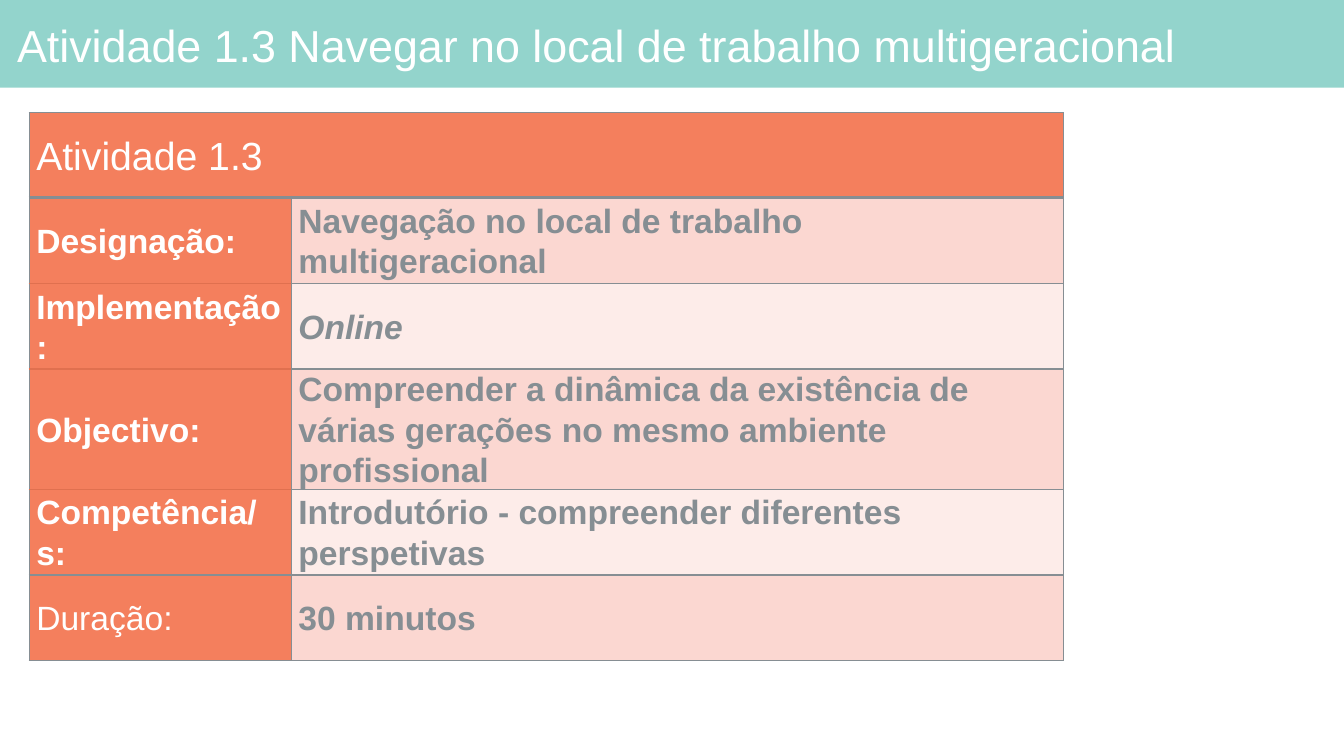
from dataclasses import dataclass

from lxml import etree
from pptx import Presentation
from pptx import util as u
from pptx.dml.color import RGBColor
from pptx.enum import shapes, text
from pptx.oxml import ns

PX = 9144  # EMU per px, 100 px to the inch


@dataclass(frozen=True)
class Theme:
    font: str = "Arial"
    teal: str = "93D4CC"
    coral: str = "F47F5D"
    seam: str = "E0704F"
    pink: str = "FBD7D1"
    pale: str = "FDECE9"
    gray: str = "868E93"
    white: str = "FFFFFF"
    title: int = 32
    head: int = 28
    body: int = 24


T = Theme()
TITLE = "Atividade 1.3 Navegar no local de trabalho multigeracional"
HEAD = "Atividade 1.3"
FACTS = [
    ("Designação:", "Navegação no local de trabalho multigeracional"),
    ("Implementação:", "Online"),
    ("Objectivo:", "Compreender a dinâmica da existência de várias "
                   "gerações no mesmo ambiente profissional"),
    ("Competência/s:", "Introdutório - compreender diferentes perspetivas"),
    ("Duração:", "30 minutos"),
]
WIDTHS = (260, 766)
HEAD_H, ROW_H = 84, 85


def px(n):
    return u.Emu(n * PX)


def rgb(code):
    return RGBColor.from_string(code)


def write(frame, words, size, color, space, bold=False, italic=False):
    frame.text = words
    para = frame.paragraphs[0]
    para.alignment = text.PP_ALIGN.LEFT
    para.line_spacing = space
    font = para.runs[0].font
    font.name, font.size = T.font, u.Pt(size)
    font.bold, font.italic = bold, italic
    font.color.rgb = rgb(color)


def add_bar(slide):
    bar = slide.shapes.add_shape(
        shapes.MSO_SHAPE.RECTANGLE, 0, 0, px(1333), px(87))
    bar.shadow.inherit = False
    bar.fill.solid()
    bar.fill.fore_color.rgb = rgb(T.teal)
    bar.line.fill.background()
    # Send the bar behind the title
    slide.shapes.title.element.addprevious(bar.element)


def set_title(slide):
    title = slide.shapes.title
    title.left, title.top = px(11), px(9)
    title.width, title.height = px(1322), px(78)
    frame = title.text_frame
    frame.margin_left = frame.margin_right = px(6)
    frame.margin_top = frame.margin_bottom = px(6)
    frame.vertical_anchor = text.MSO_ANCHOR.MIDDLE
    frame.auto_size = text.MSO_AUTO_SIZE.NONE
    frame.word_wrap = True
    write(frame, TITLE, T.title, T.white, 0.9)


def set_edges(cell, top, low):
    """Draw the four borders; top and low are (color, points)."""
    props = cell._tc.get_or_add_tcPr()
    side = (T.gray, 1)
    for tag, (color, width) in zip(
            ("a:lnL", "a:lnR", "a:lnT", "a:lnB"), (side, side, top, low)):
        line = etree.SubElement(props, ns.qn(tag), w=str(u.Pt(width)))
        fill = etree.SubElement(line, ns.qn("a:solidFill"))
        etree.SubElement(fill, ns.qn("a:srgbClr"), val=color)


def style_cell(cell, fill, top, low):
    set_edges(cell, top, low)
    cell.fill.solid()
    cell.fill.fore_color.rgb = rgb(fill)
    cell.margin_left = cell.margin_right = px(7)
    cell.margin_top = cell.margin_bottom = 0
    cell.vertical_anchor = text.MSO_ANCHOR.MIDDLE


def add_facts(slide):
    last = len(FACTS)
    grid = slide.shapes.add_table(
        last + 1, 2, px(29), px(112), px(sum(WIDTHS)),
        px(HEAD_H + last * ROW_H)).table
    grid.first_row = grid.horz_banding = False
    for col, width in zip(grid.columns, WIDTHS):
        col.width = px(width)
    for i, row in enumerate(grid.rows):
        row.height = px(ROW_H if i else HEAD_H)

    # Header row
    thin, thick, rule = (T.gray, 1), (T.gray, 3), (T.gray, 2)
    for cell in grid.rows[0].cells:
        style_cell(cell, T.coral, thin, thick)
    grid.cell(0, 0).merge(grid.cell(0, 1))
    write(grid.cell(0, 0).text_frame, HEAD, T.head, T.white, 1.07)

    # Label and value rows
    for i, (label, value) in enumerate(FACTS, 1):
        name, fact = grid.rows[i].cells
        for cell, fill, inner in (
                (name, T.coral, (T.seam, 1)),
                (fact, T.pink if i % 2 else T.pale, thin)):
            top = {1: thick, last: rule}.get(i, inner)
            low = {last - 1: rule, last: thin}.get(i, inner)
            style_cell(cell, fill, top, low)
        write(name.text_frame, label, T.body, T.white, 1.07, bold=i < last)
        write(fact.text_frame, value, T.body, T.gray, 1.07,
              bold=True, italic=value == "Online")


def main():
    deck = Presentation()
    deck.slide_width, deck.slide_height = px(1333), px(750)
    slide = deck.slides.add_slide(deck.slide_layouts[5])
    add_bar(slide)
    set_title(slide)
    add_facts(slide)
    deck.save("out.pptx")


if __name__ == "__main__":
    main()
